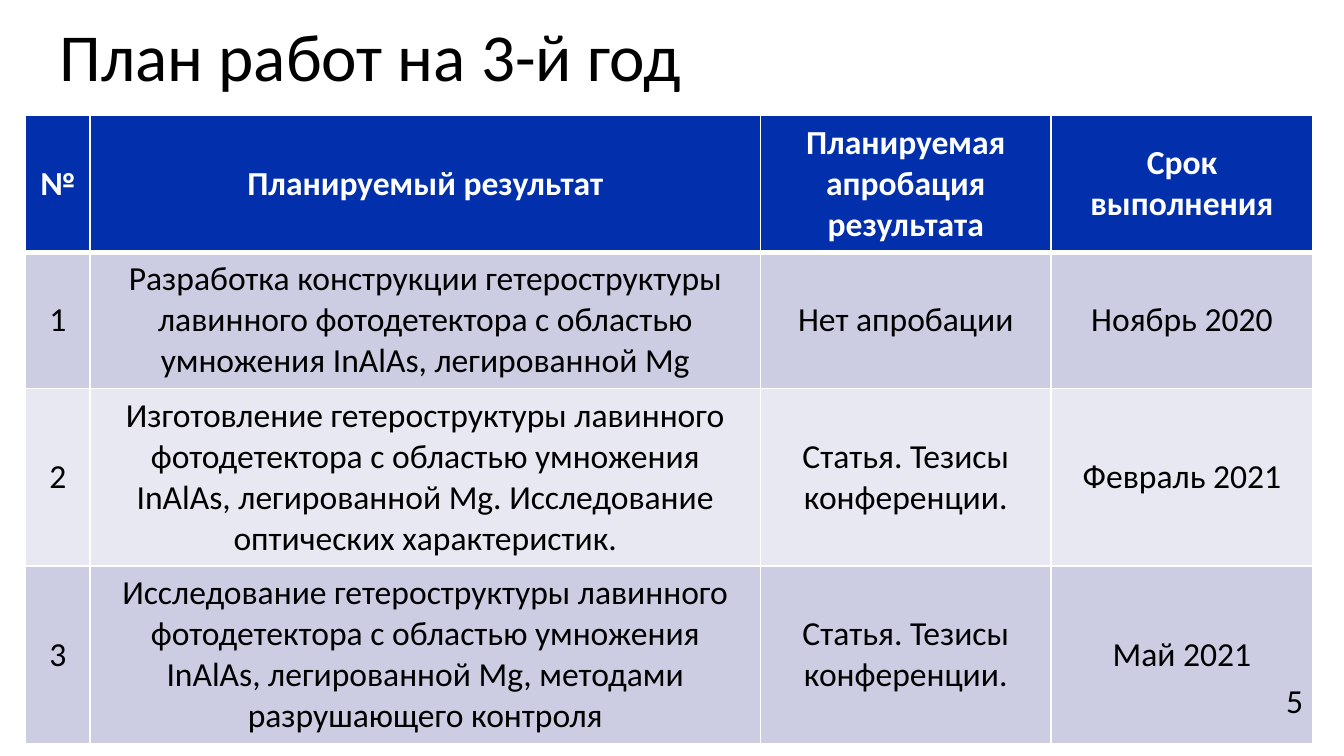
from lxml import etree
from pptx import Presentation
from pptx import util as u
from pptx.dml.color import RGBColor
from pptx.enum import text
from pptx.oxml import ns

TITLE = "План работ на 3-й год"
PAGE = "5"
HEADER = ("№", "Планируемый результат", "Планируемая апробация результата", "Срок выполнения")
ROWS = [
    ("1", "Разработка конструкции гетероструктуры лавинного фотодетектора "
     "с областью умножения InAlAs, легированной Mg", "Нет апробации", "Ноябрь 2020"),
    ("2", "Изготовление гетероструктуры лавинного фотодетектора с областью умножения "
     "InAlAs, легированной Mg. Исследование оптических характеристик.",
     "Статья. Тезисы конференции.", "Февраль 2021"),
    ("3", "Исследование гетероструктуры лавинного фотодетектора с областью умножения "
     "InAlAs, легированной Mg, методами разрушающего контроля",
     "Статья. Тезисы конференции.", "Май 2021"),
]
WIDTH, RATIO = 10, 9 / 16
COLS = (0.48, 4.99, 2.16, 1.95)
LINES = (3, 3, 4, 4)
LINE_H, PAD = 0.3, 0.1
BLUE, BANDS = "0230AC", ("CCCDE3", "E7E8F1")
WHITE, BLACK = "FFFFFF", "000000"
THIN, THICK = 1, 3


def color(value):
    return RGBColor.from_string(value)


def style(p, size, fill, bold=False, align=text.PP_ALIGN.CENTER):
    p.alignment = align
    f = p.font
    f.name, f.size, f.bold = "Calibri", u.Pt(size), bold
    f.color.rgb = color(fill)


def place(sp, left, top, width, height):
    sp.left, sp.top, sp.width, sp.height = map(u.Inches, (left, top, width, height))


def border(cell, side, width):
    ln = etree.SubElement(cell._tc.get_or_add_tcPr(), ns.qn(f"a:ln{side}"), w=str(u.Pt(width)))
    fill = etree.SubElement(ln, ns.qn("a:solidFill"))
    etree.SubElement(fill, ns.qn("a:srgbClr"), val=WHITE)


def add_plan(s):
    data = [HEADER, *ROWS]
    heights = [n * LINE_H + PAD for n in LINES]
    frame = s.shapes.add_table(len(data), len(COLS), u.Inches(0.19), u.Inches(0.86),
                               u.Inches(sum(COLS)), u.Inches(sum(heights)))
    table = frame.table
    for col, width in zip(table.columns, COLS):
        col.width = u.Inches(width)
    for i, (row, height, values) in enumerate(zip(table.rows, heights, data)):
        row.height = u.Inches(height)
        head = i == 0
        edges = {"L": THIN, "R": THIN, "T": THICK if i == 1 else THIN, "B": THICK if head else THIN}
        for cell, value in zip(row.cells, values):
            for side, width in edges.items():
                border(cell, side, width)
            cell.fill.solid()
            cell.fill.fore_color.rgb = color(BLUE if head else BANDS[(i - 1) % 2])
            cell.vertical_anchor = text.MSO_ANCHOR.MIDDLE
            cell.text = value
            style(cell.text_frame.paragraphs[0], 18, WHITE if head else BLACK, head)


def main():
    prs = Presentation()
    prs.slide_width, prs.slide_height = u.Inches(WIDTH), u.Inches(WIDTH * RATIO)
    s = prs.slides.add_slide(prs.slide_layouts[5])

    title = s.shapes.title
    place(title, 0.21, 0.06, 5.09, 0.7)
    title.text = TITLE
    title.text_frame.vertical_anchor = text.MSO_ANCHOR.BOTTOM
    style(title.text_frame.paragraphs[0], 36, BLACK)

    add_plan(s)

    page = s.shapes.add_textbox(*map(u.Inches, (9.47, 5.01, 0.29, 0.4)))
    page.text_frame.text = PAGE
    style(page.text_frame.paragraphs[0], 18, BLACK, align=text.PP_ALIGN.LEFT)

    prs.save("out.pptx")


if __name__ == "__main__":
    main()
